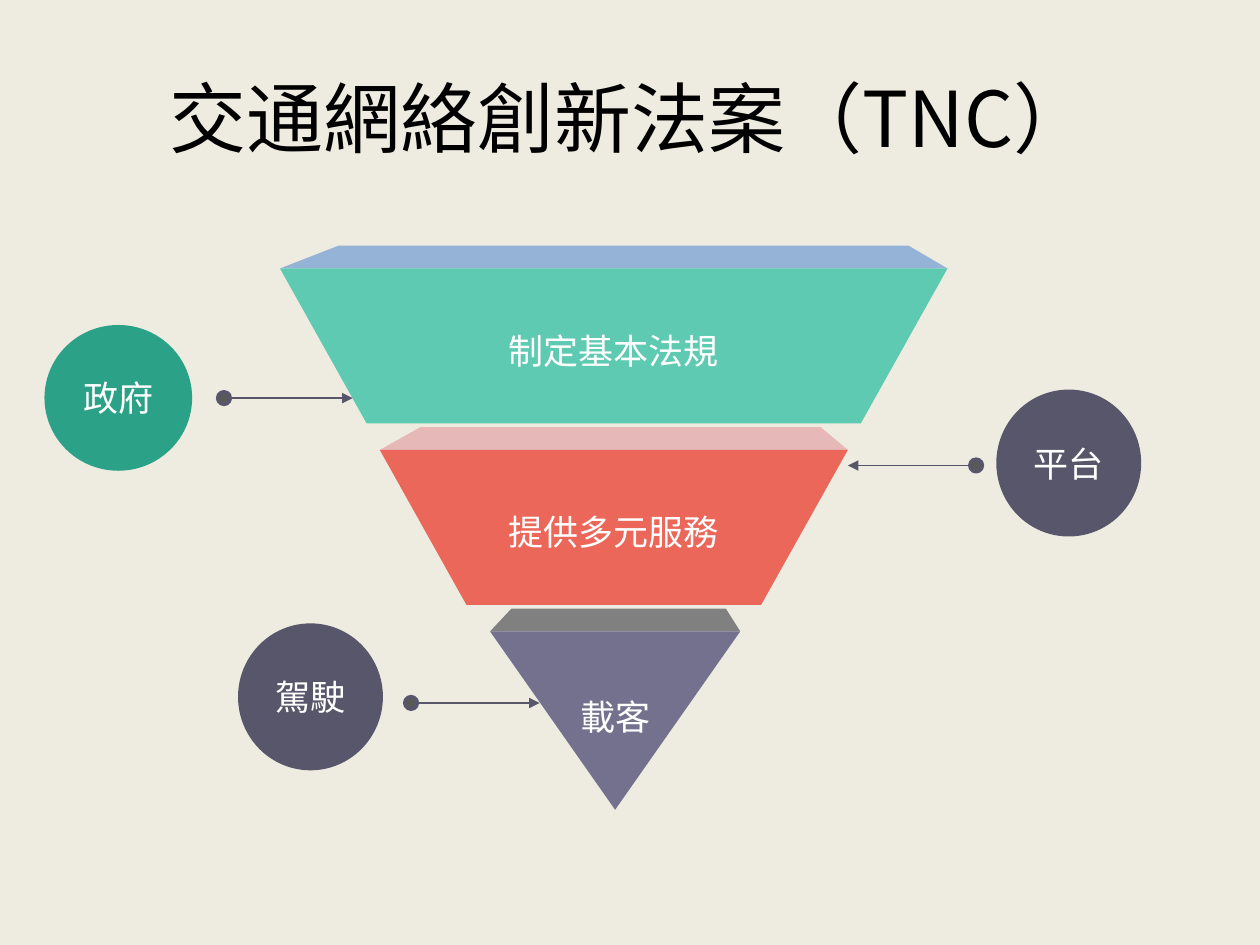
from lxml.etree import SubElement
from pptx import Presentation
from pptx.dml.color import RGBColor
from pptx.enum.shapes import MSO_CONNECTOR, MSO_SHAPE
from pptx.enum.text import MSO_ANCHOR, PP_ALIGN
from pptx.oxml.ns import qn
from pptx.util import Pt

FONT = "Noto Sans CJK SC"
SLATE = "58566A"


def color(hex_code):
    return RGBColor.from_string(hex_code)


def write(frame, text, size=20, hue="FFFFFF", spacing=1.0, insets=(7.2, 3.6, 7.2, 3.6)):
    frame.word_wrap = True
    frame.vertical_anchor = MSO_ANCHOR.MIDDLE
    frame.margin_left, frame.margin_top, frame.margin_right, frame.margin_bottom = map(Pt, insets)
    paragraph = frame.paragraphs[0]
    paragraph.alignment = PP_ALIGN.CENTER
    paragraph.line_spacing = spacing
    run = paragraph.add_run()
    run.text = text
    run.font.size = Pt(size)
    run.font.name = FONT
    run.font.color.rgb = color(hue)
    SubElement(run.font._element, qn("a:ea")).set("typeface", FONT)


class FunnelSlide:
    def __init__(self, deck, background):
        self.slide = deck.slides.add_slide(deck.slide_layouts[5])
        self.shapes = self.slide.shapes
        self.slide.background.fill.solid()
        self.slide.background.fill.fore_color.rgb = color(background)

    def title(self, text):
        heading = self.shapes.title
        heading.left, heading.top, heading.width, heading.height = map(Pt, (36, 21.6, 648, 90))
        write(heading.text_frame, text, size=44, hue="000000")

    def paint(self, shape, fill, outline=None):
        shape.shadow.inherit = False
        shape.fill.solid()
        shape.fill.fore_color.rgb = color(fill)
        if outline:
            shape.line.color.rgb = color(outline)
            shape.line.width = Pt(2)
        else:
            shape.line.fill.background()
        return shape

    def polygon(self, points, fill):
        (first_x, first_y), *others = points
        outline = self.shapes.build_freeform(Pt(first_x), Pt(first_y))
        outline.add_line_segments([(Pt(x), Pt(y)) for x, y in others], close=True)
        return self.paint(outline.convert_to_shape(), fill)

    def ellipse(self, left, top, width, height, fill, outline=None):
        box = map(Pt, (left, top, width, height))
        return self.paint(self.shapes.add_shape(MSO_SHAPE.OVAL, *box), fill, outline)

    def actor(self, text, left, top, width, height, fill):
        write(self.ellipse(left, top, width, height, fill).text_frame, text)

    def pin(self, start, end, y):
        arrow = self.shapes.add_connector(MSO_CONNECTOR.STRAIGHT, Pt(start), Pt(y), Pt(end), Pt(y))
        arrow.line.color.rgb = color(SLATE)
        arrow.line.width = Pt(0.75)
        SubElement(arrow.line._get_or_add_ln(), qn("a:tailEnd")).set("type", "triangle")
        SubElement(arrow._element.spPr, qn("a:effectLst"))
        dot = 7.2
        self.ellipse(start - dot / 2, y - dot / 2, dot, dot, "595959", SLATE)

    def tier(self, text, top, height, rim, back, base, fill, lid_fill, insets):
        lid_height = 13
        front = top + lid_height
        left, right = rim
        self.polygon([(back[0], top), (back[1], top), (right, front), (left, front)], lid_fill)
        corners = [(left, front), (right, front)] + [(x, front + height) for x in base]
        write(self.polygon(corners, fill).text_frame, text, spacing=1.2, insets=insets)


def main():
    deck = Presentation()
    deck.slide_width, deck.slide_height = Pt(720), Pt(540)
    funnel = FunnelSlide(deck, "EEECE1")
    funnel.title("交通網絡創新法案（TNC）")

    wide, tip = (28, 3, 28, 3), (9.4, 23.8, 9.4, 33.1)
    tiers = [
        ("制定基本法規", 88.5, (160, 541.5), (193.4, 519.3), (492, 209.5), "5ECAB1", "95B3D7", wide),
        ("提供多元服務", 88.5, (217, 484.5), (240.2, 469), (435, 266.5), "EB6759", "E6B9B8", wide),
        ("載客", 102, (280, 423), (292.2, 414.8), (351.5,), "73718E", "808080", tip),
    ]
    for level, (text, height, *form) in enumerate(tiers):
        funnel.tier(text, 140.4 + level * 103.7, height, *form)

    funnel.actor("政府", 25.4, 185.7, 84.4, 83.3, "2BA187")
    funnel.actor("駕駛", 136, 356.2, 82.8, 84, SLATE)
    funnel.actor("平台", 569.3, 222.6, 82.8, 84, SLATE)
    for start, end, y in [(128, 201.5, 227.5), (234.9, 308.4, 401.7), (557.8, 484.5, 266)]:
        funnel.pin(start, end, y)

    deck.save("out.pptx")


if __name__ == "__main__":
    main()
